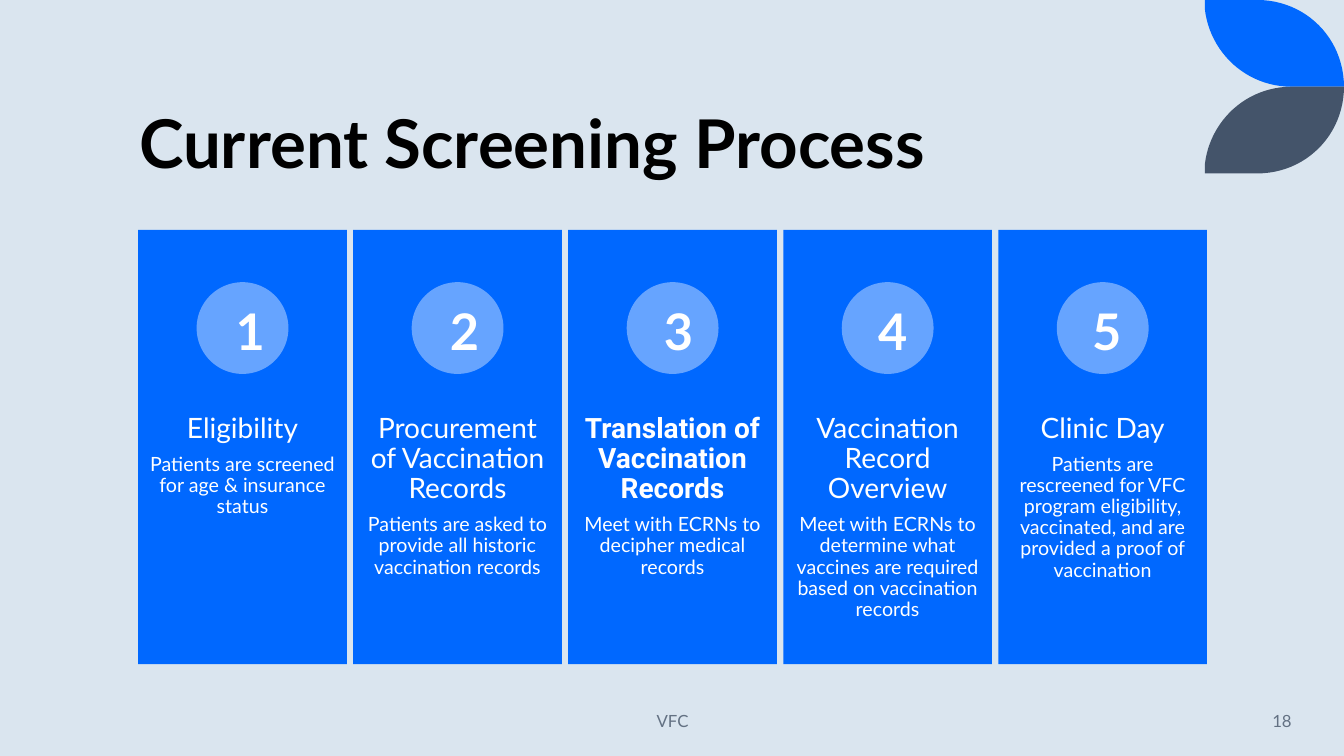
from dataclasses import dataclass
from pptx import Presentation
from pptx.dml.color import RGBColor as Rgb
from pptx.enum.shapes import MSO_SHAPE as Kind
from pptx.enum.text import MSO_ANCHOR as Anchor, MSO_AUTO_SIZE as Fit, PP_ALIGN as Align
from pptx.util import Inches, Pt


@dataclass(frozen=True)
class Theme:
    back: str = "DAE5EF"
    blue: str = "0068FF"
    pale: str = "66A4FF"
    slate: str = "44546A"
    ink: str = "000000"
    white: str = "FFFFFF"
    gray: str = "637183"
    font: str = "Lato"
    accent: str = "Roboto"
    title: int = 48
    digit: int = 36
    head: int = 20
    body: int = 14
    foot: int = 12


@dataclass(frozen=True)
class Box:
    """Left, top, width and height in percent of the slide."""
    x: float
    y: float
    w: float
    h: float

    def shift(self, dx: float) -> "Box":
        return Box(self.x + dx, self.y, self.w, self.h)

    def place(self) -> tuple[int, int, int, int]:
        return across(self.x), down(self.y), across(self.w), down(self.h)


@dataclass(frozen=True)
class Step:
    head: str
    body: str
    strong: bool = False


THEME = Theme()
WIDE, HIGH = Inches(13.33), Inches(7.5)

# Grid: five columns, first one given
PITCH = 16
DIGIT_PITCH = 15.93
CARD = Box(10.28, 30.4, 15.53, 57.47)
COPY = Box(10.28, 53.33, 15.53, 22.93)
DISC = Box(14.63, 37.33, 6.83, 12.13)
DIGIT = Box(16.8, 39.07, 2.85, 9.47)
TITLE = Box(9.6, 5.6, 80.2, 19.33)
FOOTER = Box(33.16, 92.67, 33.76, 5.33)
PAGE = Box(83.27, 92.67, 13.58, 5.33)

# Leaf outline: start, then two curves joined by straight edges
LEAF_H = 11.47
CURVES = [
    [(93.55, 0), (97.15, 0), (100, 5.07), (100, LEAF_H)],
    [(96.1, LEAF_H), (92.72, LEAF_H), (90.02, 6.93), (89.65, 1.2)],
]
CORNER = (89.65, 0)

STEPS = [
    Step("Eligibility", "Patients are screened for age & insurance status"),
    Step("Procurement of Vaccination Records",
         "Patients are asked to provide all historic vaccination records"),
    Step("Translation of Vaccination Records",
         "Meet with ECRNs to decipher medical records", True),
    Step("Vaccination Record Overview",
         "Meet with ECRNs to determine what vaccines are required based on vaccination records"),
    Step("Clinic Day",
         "Patients are rescreened for VFC program eligibility, vaccinated, "
         "and are provided a proof of vaccination"),
]


def across(share: float) -> int:
    return round(WIDE * share / 100)


def down(share: float) -> int:
    return round(HIGH * share / 100)


def paint(shape, color: str) -> None:
    shape.shadow.inherit = False
    shape.fill.solid()
    shape.fill.fore_color.rgb = Rgb.from_string(color)
    shape.line.fill.background()


def style(para, size: int, color: str, bold: bool = False,
          align: Align = Align.CENTER, name: str = THEME.font) -> None:
    para.alignment = align
    para.font.name = name
    para.font.size = Pt(size)
    para.font.bold = bold
    para.font.color.rgb = Rgb.from_string(color)


def block(slide, kind: Kind, box: Box, color: str) -> None:
    paint(slide.shapes.add_shape(kind, *box.place()), color)


def label(slide, box: Box, text: str, anchor: Anchor = Anchor.TOP):
    frame = slide.shapes.add_textbox(*box.place()).text_frame
    frame.word_wrap = True
    frame.vertical_anchor = anchor
    frame.text = text
    return frame


def bend(curve: list, part: float) -> tuple[float, float]:
    rest = 1 - part
    mix = (rest ** 3, 3 * rest ** 2 * part, 3 * rest * part ** 2, part ** 3)
    return tuple(sum(m * p[axis] for m, p in zip(mix, curve)) for axis in (0, 1))


def leaf(slide, color: str, flip: bool) -> None:
    dots = [CORNER] + [bend(curve, i / 24) for curve in CURVES for i in range(25)]
    spots = [(across(x), down(2 * LEAF_H - y if flip else y)) for x, y in dots]
    path = slide.shapes.build_freeform(*spots[0])
    path.add_line_segments(spots[1:], close=True)
    paint(path.convert_to_shape(), color)


def card(slide, col: int, step: Step) -> None:
    dx = col * PITCH
    block(slide, Kind.RECTANGLE, CARD.shift(dx), THEME.blue)
    block(slide, Kind.OVAL, DISC.shift(dx), THEME.pale)
    frame = label(slide, COPY.shift(dx), step.head)
    frame.margin_left = frame.margin_right = Inches(0.11)
    frame.margin_top = frame.margin_bottom = Inches(0.11)
    head, body = frame.paragraphs[0], frame.add_paragraph()
    body.text = step.body
    style(head, THEME.head, THEME.white, step.strong,
          name=THEME.accent if step.strong else THEME.font)
    style(body, THEME.body, THEME.white)
    head.line_spacing = body.line_spacing = 0.9
    head.space_after = Pt(7)
    body.space_before = Pt(0)
    # Step number
    digit = label(slide, DIGIT.shift(col * DIGIT_PITCH), str(col + 1))
    style(digit.paragraphs[0], THEME.digit, THEME.white, True)


def main() -> None:
    deck = Presentation()
    deck.slide_width, deck.slide_height = WIDE, HIGH
    slide = deck.slides.add_slide(deck.slide_layouts[5])
    slide.background.fill.solid()
    slide.background.fill.fore_color.rgb = Rgb.from_string(THEME.back)

    # Corner leaves
    leaf(slide, THEME.blue, False)
    leaf(slide, THEME.slate, True)

    # Title
    title = slide.shapes.title
    title.left, title.top, title.width, title.height = TITLE.place()
    frame = title.text_frame
    frame.text = "Current Screening Process"
    frame.auto_size = Fit.NONE
    frame.vertical_anchor = Anchor.BOTTOM
    style(frame.paragraphs[0], THEME.title, THEME.ink, True, Align.LEFT)
    frame.paragraphs[0].line_spacing = 0.9

    # Steps
    for col, step in enumerate(STEPS):
        card(slide, col, step)

    # Footer
    for box, text, align in ((FOOTER, "VFC", Align.CENTER), (PAGE, "18", Align.RIGHT)):
        foot = label(slide, box, text, Anchor.MIDDLE)
        style(foot.paragraphs[0], THEME.foot, THEME.gray, align=align)

    deck.save("out.pptx")


if __name__ == "__main__":
    main()
